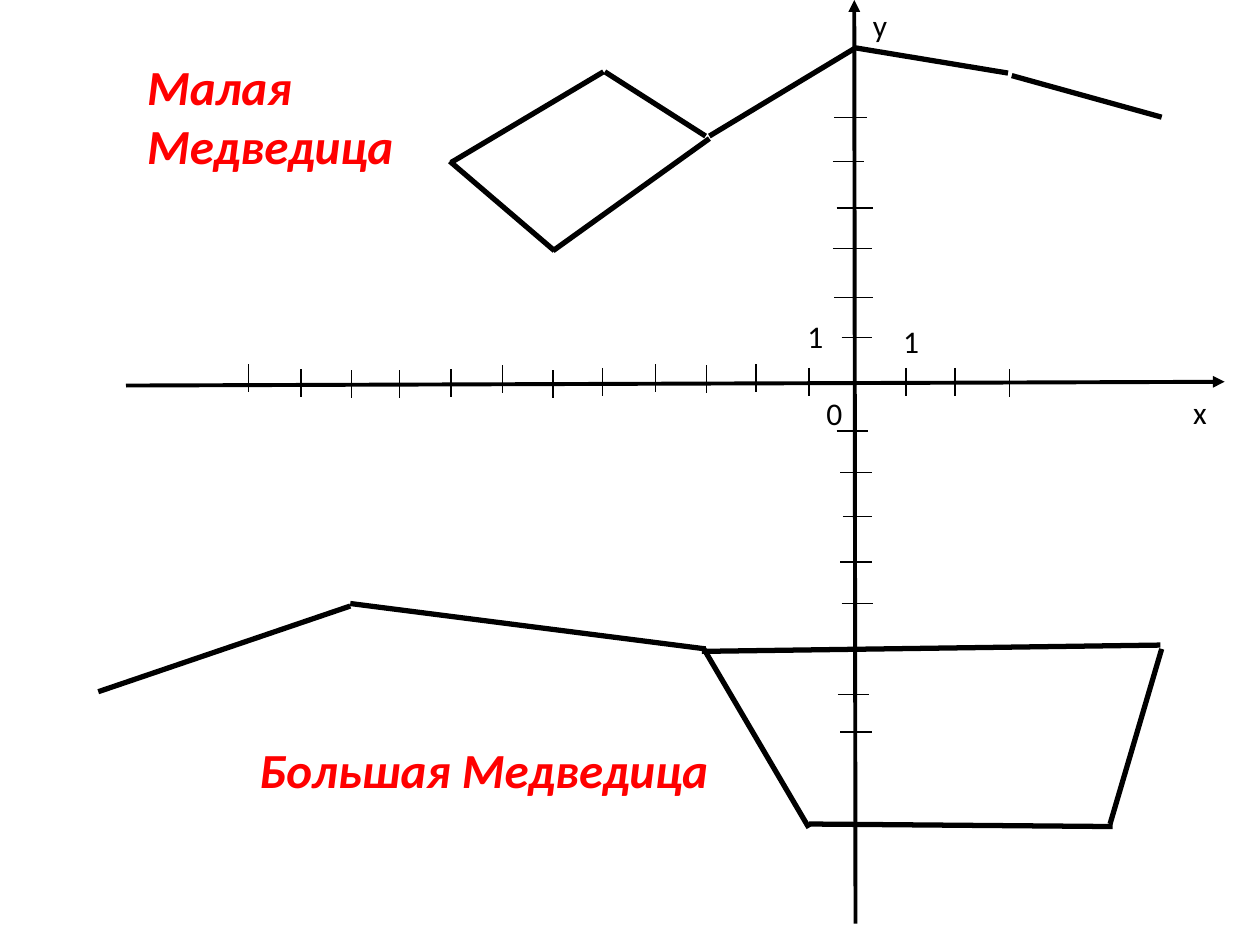
"""Build a slide with the Ursa Minor and Ursa Major constellations on a coordinate plane."""
from lxml import etree
from pptx import Presentation
from pptx import util as u
from pptx.dml.color import RGBColor
from pptx.enum import shapes, text
from pptx.oxml import ns

THEME = {
    "font": "Calibri",
    "ink": RGBColor(0, 0, 0),
    "title": RGBColor(255, 0, 0),
    "label_size": 18,
    "title_size": 28,
    "axis": 2.25,
    "tick": 0.75,
    "star": 3,
}
SLIDE_SIZE = (10, 7.5)
TICK_HEIGHT = 0.22

AXES = [(6.79, 7.33, 6.78, 0), (1, 3.06, 9.72, 3.03)]
X_TICKS = [
    (1.97, 2.89), (2.39, 2.93), (2.79, 2.94), (3.17, 2.94), (3.58, 2.93),
    (3.99, 2.9), (4.39, 2.94), (4.78, 2.92), (5.2, 2.89), (5.61, 2.9),
    (6, 2.89), (6.42, 2.92), (7.19, 2.92), (7.58, 2.92), (8.01, 2.93),
]
Y_TICKS = [
    (0.93, 6.62, 6.88), (1.28, 6.61, 6.86), (1.65, 6.64, 6.93),
    (1.97, 6.61, 6.92), (2.36, 6.62, 6.93), (2.68, 6.68, 6.92),
    (3.42, 6.64, 6.89), (3.75, 6.67, 6.92), (4.1, 6.69, 6.92),
    (4.46, 6.67, 6.92), (4.79, 6.68, 6.93), (5.15, 6.68, 6.93),
    (5.51, 6.65, 6.9), (5.81, 6.67, 6.92),
]
URSA_MAJOR = [
    (5.6, 5.15, 2.78, 4.79), (2.78, 4.81, 0.78, 5.49),
    (5.57, 5.17, 9.21, 5.12), (9.22, 5.15, 8.81, 6.54),
    (8.83, 6.56, 6.42, 6.54), (6.42, 6.57, 5.58, 5.14),
]
URSA_MINOR = [
    (4.4, 1.99, 3.57, 1.28), (3.58, 1.29, 4.79, 0.57),
    (4.8, 0.57, 5.6, 1.08), (5.63, 1.08, 6.79, 0.38),
    (6.79, 0.38, 8, 0.58), (8.03, 0.6, 9.22, 0.93),
    (4.39, 1.99, 5.63, 1.1),
]
LABELS = [
    ("y", 6.83, 0, 0.28, 0.4),
    ("x", 9.37, 3.07, 0.38, 0.4),
    ("0", 6.46, 3.08, 0.39, 0.4),
    ("1", 7.07, 2.51, 0.39, 0.4),
    ("1", 6.31, 2.47, 0.33, 0.4),
]
TITLES = [
    ("Малая Медведица", 1.07, 0.4, 2.74, 1.03),
    ("Большая Медведица", 1.96, 5.82, 3.86, 0.57),
]


def add_line(s, ends, width, arrow=False):
    """Draw a straight line, with an arrowhead at its end if asked."""
    sp = s.shapes.add_connector(
        shapes.MSO_CONNECTOR.STRAIGHT, *(u.Inches(v) for v in ends))
    sp.line.color.rgb = THEME["ink"]
    sp.line.width = u.Pt(width)
    if arrow:
        tail = etree.SubElement(sp.line._get_or_add_ln(), ns.qn("a:tailEnd"))
        tail.set("type", "triangle")
    etree.SubElement(sp._element.spPr, ns.qn("a:effectLst"))


def add_text(s, words, box, font):
    """Place wrapped text with the given font values."""
    tf = s.shapes.add_textbox(*(u.Inches(v) for v in box)).text_frame
    tf.word_wrap = True
    tf.auto_size = text.MSO_AUTO_SIZE.SHAPE_TO_FIT_TEXT
    r = tf.paragraphs[0].add_run()
    r.text = words
    r.font.color.rgb = font["color"]
    for name, value in font["format"].items():
        setattr(r.font, name, value)


def main():
    """Lay out the axes, ticks, constellations and text."""
    prs = Presentation()
    prs.slide_width, prs.slide_height = (u.Inches(v) for v in SLIDE_SIZE)
    s = prs.slides.add_slide(prs.slide_layouts[6])

    for ends in AXES:
        add_line(s, ends, THEME["axis"], arrow=True)
    x_ticks = [(x, top, x, top + TICK_HEIGHT) for x, top in X_TICKS]
    y_ticks = [(left, y, right, y) for y, left, right in Y_TICKS]
    for ends in x_ticks + y_ticks:
        add_line(s, ends, THEME["tick"])
    for ends in URSA_MAJOR + URSA_MINOR:
        add_line(s, ends, THEME["star"])

    label = {"color": THEME["ink"], "format": {
        "name": THEME["font"], "size": u.Pt(THEME["label_size"])}}
    title = {"color": THEME["title"], "format": {
        "name": THEME["font"], "size": u.Pt(THEME["title_size"]),
        "bold": True, "italic": True}}
    for items, font in ((LABELS, label), (TITLES, title)):
        for words, *box in items:
            add_text(s, words, box, font)

    prs.save("out.pptx")


if __name__ == "__main__":
    main()
